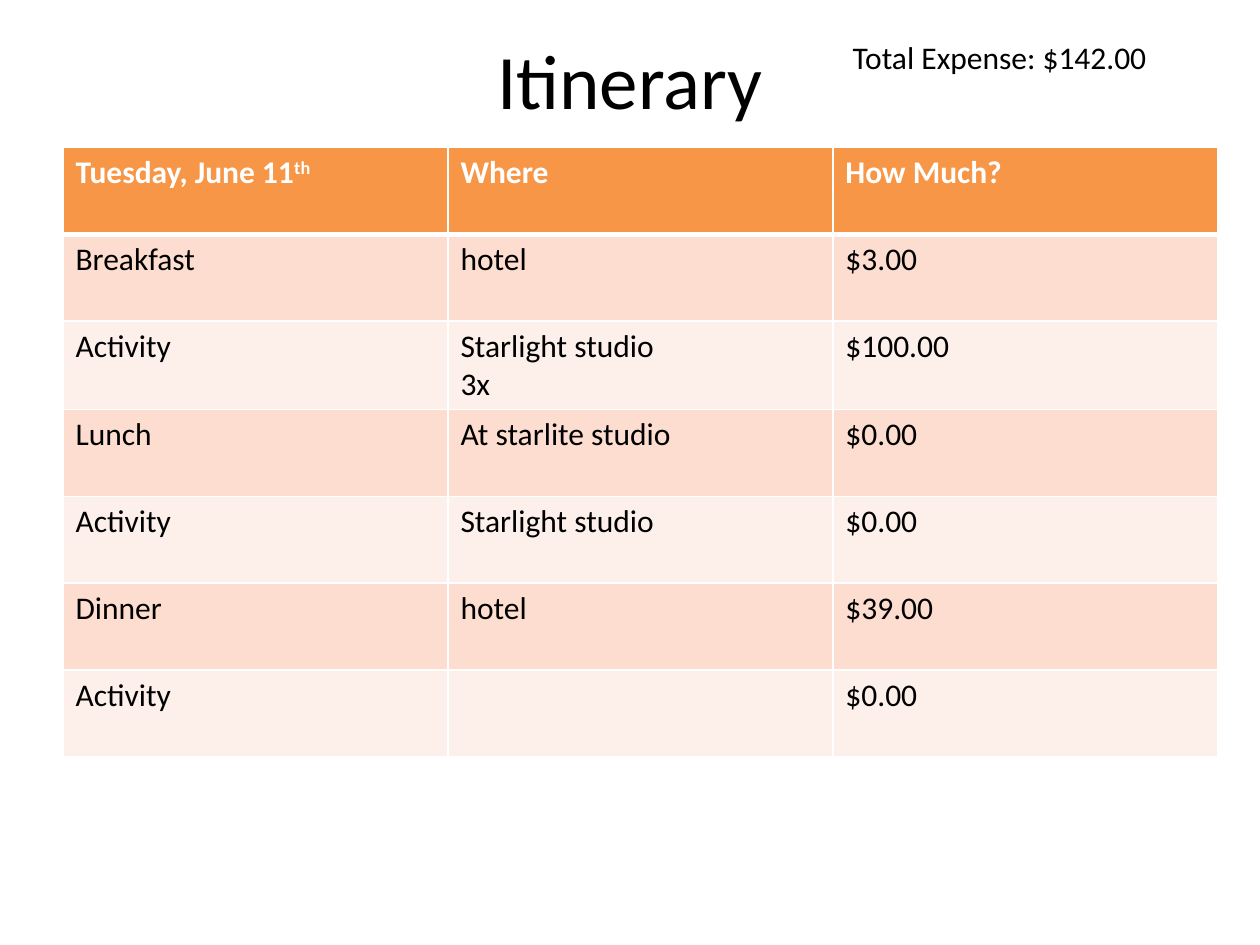
import pptx
import pptx.util
import pptx.dml.color
import pptx.enum.text
import pptx.oxml
import pptx.oxml.ns

Cm = pptx.util.Cm
Pt = pptx.util.Pt
HEAD = [[("Tuesday, June 11", 0), ("th", 30000)]], [[("Where", 0)]], [[("How Much?", 0)]]
PLANS = [
    ("Breakfast", "hotel", "$3.00"),
    ("Activity", "Starlight studio\n3x", "$100.00"),
    ("Lunch", "At starlite studio", "$0.00"),
    ("Activity", "Starlight studio", "$0.00"),
    ("Dinner", "hotel", "$39.00"),
    ("Activity", "", "$0.00"),
]


def color(code):
    return pptx.dml.color.RGBColor.from_string(code)


def add_run(para, text, size=18, code="000000", bold=False, base=0):
    run = para.add_run()
    run.text = text
    font = run.font
    font.name = "Calibri"
    font.size = Pt(size)
    font.bold = bold
    font.color.rgb = color(code)
    if base:
        font._element.set("baseline", str(base))


def add_title(slide, left, top, width, height):
    title = slide.shapes.title
    title.left, title.top, title.width, title.height = map(Cm, (left, top, width, height))
    frame = title.text_frame
    frame.vertical_anchor = pptx.enum.text.MSO_ANCHOR.MIDDLE
    para = frame.paragraphs[0]
    para.alignment = pptx.enum.text.PP_ALIGN.CENTER
    add_run(para, "Itinerary", 44)


def add_total(slide, left, top, width, height):
    box = slide.shapes.add_textbox(*map(Cm, (left, top, width, height)))
    frame = box.text_frame
    frame.word_wrap = True
    frame.auto_size = pptx.enum.text.MSO_AUTO_SIZE.SHAPE_TO_FIT_TEXT
    add_run(frame.paragraphs[0], "Total Expense: $142.00")


def add_edge(cell, side, width):
    cell._tc.get_or_add_tcPr().append(pptx.oxml.parse_xml(
        f'<a:{side} {pptx.oxml.ns.nsdecls("a")} w="{Pt(width)}"><a:solidFill>'
        f'<a:srgbClr val="FFFFFF"/></a:solidFill></a:{side}>'))


def fill_cell(cell, lines, row):
    edges = {"lnL": 1, "lnR": 1, "lnT": 3 if row == 1 else 1, "lnB": 3 if row == 0 else 1}
    for side, width in edges.items():
        add_edge(cell, side, width)
    cell.fill.solid()
    fill = "F79646" if row == 0 else ("FDEFE9", "FCDDCF")[row % 2]
    cell.fill.fore_color.rgb = color(fill)
    frame = cell.text_frame
    for index, runs in enumerate(lines):
        para = frame.add_paragraph() if index else frame.paragraphs[0]
        for text, base in runs:
            add_run(para, text, 18, "000000" if row else "FFFFFF", row == 0, base)


def add_plan(slide, left, top, width, height):
    plans = [[[[(line, 0)] for line in text.split("\n") if line] for text in plan]
             for plan in PLANS]
    rows = [HEAD, *plans]
    box = map(Cm, (left, top, width, height))
    table = slide.shapes.add_table(len(rows), len(HEAD), *box).table
    for col in table.columns:
        col.width = Cm(width / len(HEAD))
    for row, cells in enumerate(rows):
        table.rows[row].height = Cm(height / len(rows))
        for col, lines in enumerate(cells):
            fill_cell(table.cell(row, col), lines, row)


def main():
    deck = pptx.Presentation()
    deck.slide_width, deck.slide_height = Cm(25.4), Cm(19.05)
    slide = deck.slides.add_slide(deck.slide_layouts[5])
    add_title(slide, 1.27, 0, 22.86, 3.18)
    add_total(slide, 16.94, 0.64, 7.82, 1.02)
    add_plan(slide, 1.27, 2.97, 23.28, 12.27)
    deck.save("out.pptx")


if __name__ == "__main__":
    main()
